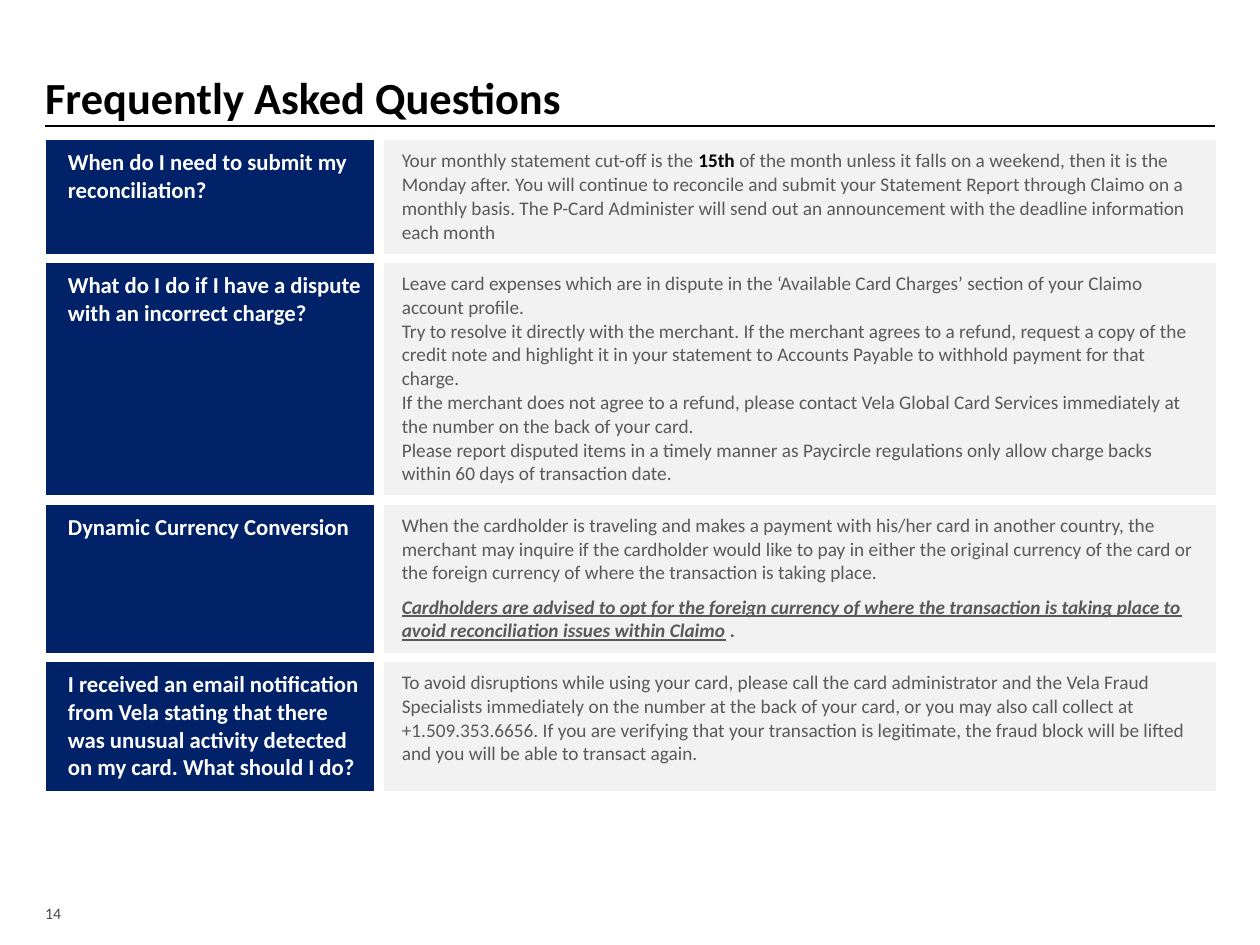
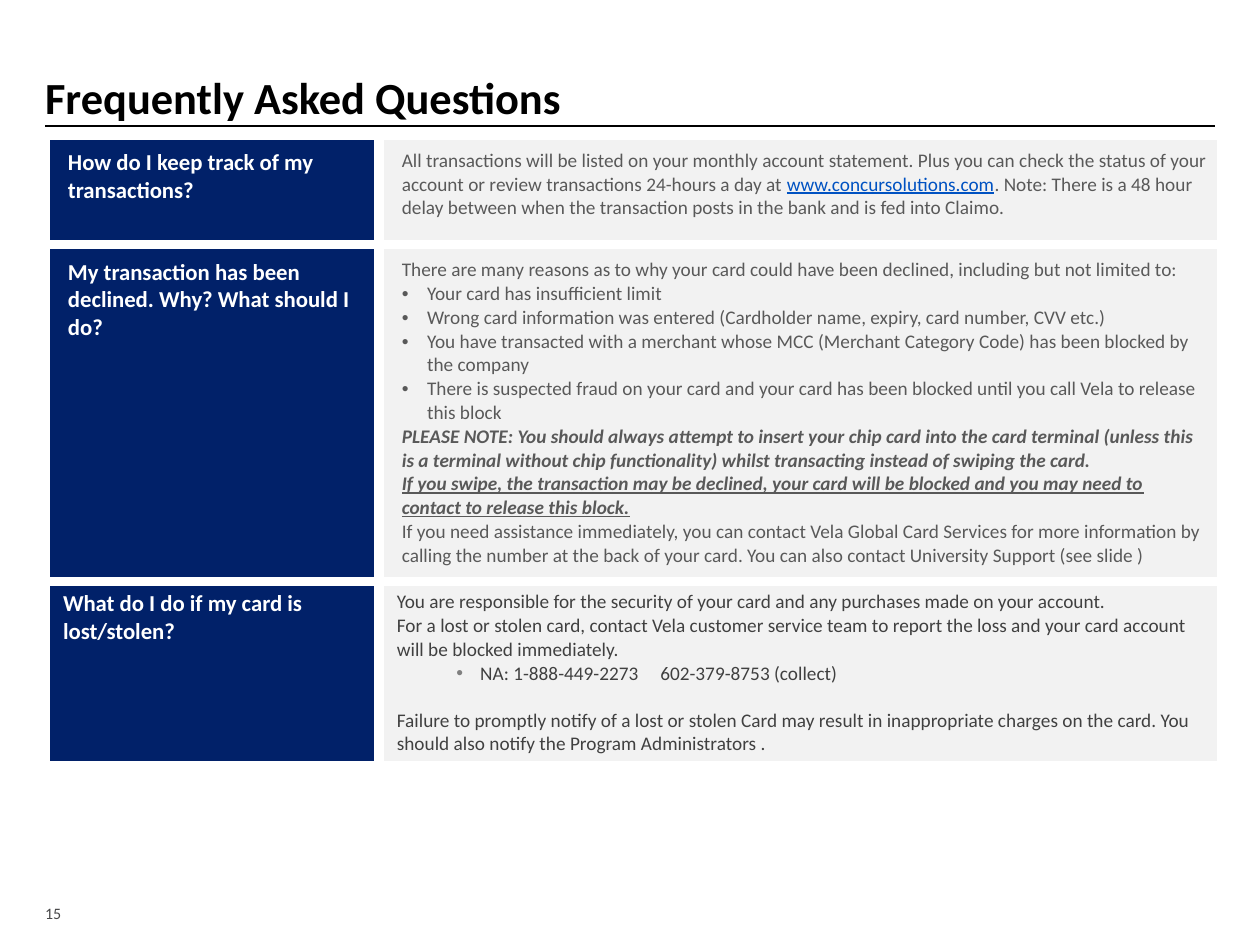
from dataclasses import dataclass

from lxml import etree
from pptx import Presentation
from pptx import util as u
from pptx.dml.color import RGBColor
from pptx.enum import shapes, text
from pptx.oxml.ns import qn


@dataclass(frozen=True)
class Theme:
    font: str = "Calibri"
    # colours
    navy: str = "012169"
    pale: str = "F2F2F2"
    white: str = "FFFFFF"
    black: str = "000000"
    grey: str = "595959"
    dark: str = "404040"
    bullet: str = "808080"
    link: str = "0052C2"
    footer: str = "484849"
    # type sizes
    title_size: float = 25.4
    question_size: float = 13
    answer_size: float = 11
    footer_size: float = 9.1


@dataclass
class Para:
    """Runs are strings or (string, format) pairs."""
    runs: tuple
    before: float = 0
    after: float = 0
    level: int = 0
    bullet: str = ""
    indent: float = 0
    hang: float = 0
    tab: float = 0


T = Theme()
LEFT = u.Cm(0.91)
ROOMY = (0.46, 0.28, 0.28, 0.28)   # left, top, right, bottom in cm
TIGHT = (0.36, 0.18, 0.28, 0.18)
STRONG = dict(bold=True, italic=True)
STRESSED = dict(STRONG, underline=True)


def add_text(p, content, size=T.answer_size, color=T.grey, bold=False,
             italic=False, underline=False):
    r = p.add_run()
    r.text = content
    f = r.font
    f.name, f.size, f.color.rgb = T.font, u.Pt(size), RGBColor.from_string(color)
    f.bold, f.italic, f.underline = bold, italic, underline
    return r


def add_color(parent, color):
    etree.SubElement(parent, qn("a:srgbClr"), val=color)


def para(*runs, **layout):
    return Para(runs, **layout)


def item(content):
    return para(content, bullet=T.grey, indent=0.51, hang=0.51)


class Deck:
    def __init__(self, theme):
        self.t = theme
        self.prs = Presentation()
        self.prs.slide_width, self.prs.slide_height = u.Cm(25.4), u.Cm(19.05)
        self.s = None

    def slide(self, title, number):
        self.s = self.prs.slides.add_slide(self.prs.slide_layouts[5])
        self.title(title)
        self.rule()
        self.page_number(number)

    def plain_frame(self, sp, anchor):
        tf = sp.text_frame
        tf.word_wrap, tf.auto_size = True, text.MSO_AUTO_SIZE.NONE
        tf.vertical_anchor = anchor
        tf.margin_left = tf.margin_top = tf.margin_right = tf.margin_bottom = 0
        p = tf.paragraphs[0]
        p.alignment = text.PP_ALIGN.LEFT
        return p

    def title(self, content):
        sp = self.s.shapes.title
        sp.left, sp.top, sp.width, sp.height = LEFT, u.Cm(1.59), u.Cm(19.05), u.Cm(0.91)
        p = self.plain_frame(sp, text.MSO_ANCHOR.TOP)
        p.line_spacing = u.Pt(self.t.title_size)
        add_text(p, content, size=self.t.title_size, color=self.t.black, bold=True)

    def rule(self):
        y = u.Cm(2.54)
        line = self.s.shapes.add_connector(
            shapes.MSO_CONNECTOR.STRAIGHT, LEFT, y, u.Cm(24.49), y)
        line.line.color.rgb = RGBColor.from_string(self.t.black)
        line.line.width = u.Pt(1.5)
        etree.SubElement(line.element.spPr, qn("a:effectLst"))

    def page_number(self, number):
        sp = self.s.shapes.add_textbox(LEFT, u.Cm(18.14), u.Cm(1.02), u.Cm(0.46))
        p = self.plain_frame(sp, text.MSO_ANCHOR.BOTTOM)
        add_text(p, str(number), size=self.t.footer_size, color=self.t.footer)

    def paragraph(self, p, spec, **fmt):
        pPr = p._p.get_or_add_pPr()
        if spec.bullet:
            pPr.set("marL", str(u.Cm(spec.indent)))
            pPr.set("indent", str(-u.Cm(spec.hang)))
            add_color(etree.SubElement(pPr, qn("a:buClr")), spec.bullet)
            etree.SubElement(pPr, qn("a:buFont"), typeface="Arial")
            etree.SubElement(pPr, qn("a:buChar"), char="•")
        if spec.tab:
            tabs = etree.SubElement(pPr, qn("a:tabLst"))
            etree.SubElement(tabs, qn("a:tab"), pos=str(u.Cm(spec.tab)), algn="l")
        p.level = spec.level
        if spec.before:
            p.space_before = u.Pt(spec.before)
        if spec.after:
            p.space_after = u.Pt(spec.after)
        for run in spec.runs:
            content, own = (run, {}) if isinstance(run, str) else run
            add_text(p, content, **{**fmt, **own})

    def cell(self, cell, paras, fill, edges, margins, **fmt):
        (cell.margin_left, cell.margin_top,
         cell.margin_right, cell.margin_bottom) = map(u.Cm, margins)
        tcPr = cell._tc.get_or_add_tcPr()
        for edge in edges:
            ln = etree.SubElement(tcPr, qn("a:ln" + edge), w=str(u.Pt(6)))
            add_color(etree.SubElement(ln, qn("a:solidFill")), self.t.white)
        cell.fill.solid()
        cell.fill.fore_color.rgb = RGBColor.from_string(fill)
        tf = cell.text_frame
        for i, spec in enumerate(paras):
            p = tf.add_paragraph() if i else tf.paragraphs[0]
            self.paragraph(p, spec, **fmt)

    def faq(self, top, widths, rows, framed=False):
        """Each row: height in cm, question, answer paragraphs, cell options."""
        heights = [row[0] for row in rows]
        frame = self.s.shapes.add_table(
            len(rows), 2, LEFT, u.Cm(top), u.Cm(sum(widths)), u.Cm(sum(heights)))
        table = frame.table
        table.first_row = table.horz_banding = False
        for column, width in zip(table.columns, widths):
            column.width = u.Cm(width)
        left_edges, right_edges = ("LRTB", "LRTB") if framed else ("RTB", "LTB")
        for i, (height, question, answer, options) in enumerate(rows):
            table.rows[i].height = u.Cm(height)
            margins = options.get("margins", ROOMY)
            self.cell(table.cell(i, 0), [para(question)], self.t.navy, left_edges,
                      margins, size=self.t.question_size, color=self.t.white, bold=True)
            self.cell(table.cell(i, 1), answer, self.t.pale, right_edges,
                      margins, color=options.get("color", self.t.grey))


GENERAL_ROWS = [
    (2.46, "When do I need to submit my reconciliation?", [
        para("Your monthly statement cut-off is the ",
             ("15th ", dict(color=T.black, bold=True)),
             "of the month unless it falls on a weekend, then it is the Monday after. "
             "You will continue to reconcile and submit your Statement Report through "
             "Claimo on a monthly basis. The P-Card Administer will send out an "
             "announcement with the deadline information each month"),
    ], {}),
    (4.84, "What do I do if I have a dispute with an incorrect charge?", [
        para("Leave card expenses which are in dispute in the ‘Available Card Charges’ "
             "section of your Claimo account profile."),
        para("Try to resolve it directly with the merchant. If the merchant agrees to a "
             "refund, request a copy of the credit note and highlight it in your "
             "statement to Accounts Payable to withhold payment for that charge."),
        para("If the merchant does not agree to a refund, please contact Vela Global Card "
             "Services immediately at the number on the back of your card."),
        para("Please report disputed items in a timely manner as Paycircle regulations "
             "only allow charge backs within 60 days of transaction date."),
    ], {}),
    (3.17, "Dynamic Currency Conversion", [
        para("When the cardholder is traveling and makes a payment with his/her card in "
             "another country, the merchant may inquire if the cardholder would like to "
             "pay in either the original currency of the card or the foreign currency "
             "of where the transaction is taking place.", after=6),
        para(("Cardholders are advised to opt for the foreign currency of where the "
              "transaction is taking place to avoid reconciliation issues within Claimo",
              STRESSED), " ", (".", STRONG)),
    ], {}),
    (2.77, "I received an email notification from Vela stating that there was unusual "
           "activity detected on my card. What should I do?", [
        para("To avoid disruptions while using your card, please call the card "
             "administrator and the Vela Fraud Specialists immediately on the number at "
             "the back of your card, or you may also call collect at +1.509.353.6656. "
             "If you are verifying that your transaction is legitimate, the fraud block "
             "will be lifted and you will be able to transact again."),
    ], {}),
]

CARD_ROWS = [
    (2.21, "How do I keep track of my transactions?", [
        para("All transactions will be listed on your monthly account statement. Plus you "
             "can check the status of your account or review transactions 24-hours a "
             "day at ",
             ("www.concursolutions.com", dict(color=T.link, underline=True)),
             ". Note: There is a 48 hour delay between when the transaction posts in "
             "the bank and is fed into Claimo."),
    ], {}),
    (6.78, "My transaction has been declined. Why? What should I do?", [
        para("There are many reasons as to why your card could have been declined, "
             "including but not limited to:"),
        item("Your card has insufficient limit"),
        item("Wrong card information was entered (Cardholder name, expiry, card number, "
             "CVV etc.)"),
        item("You have transacted with a merchant whose MCC (Merchant Category Code) has "
             "been blocked by the company"),
        item("There is suspected fraud on your card and your card has been blocked until "
             "you call Vela to release this block"),
        para(("PLEASE NOTE: You should always attempt to insert your chip card into the "
              "card terminal (unless this is a terminal without chip functionality) "
              "whilst transacting instead of swiping the card.", STRONG)),
        para(("If you swipe, the transaction may be declined, your card will be blocked "
              "and you may need to contact to release this block.", STRESSED)),
        para("If you need assistance immediately, you can contact Vela Global Card "
             "Services for more information by calling the number at the back of your "
             "card. You can also contact University Support (see slide )"),
    ], {}),
    (3.71, "What do I do if my card is lost/stolen?", [
        para("You are responsible for the security of your card and any purchases made on "
             "your account."),
        para("For a lost or stolen card, contact Vela customer service team to report the "
             "loss and your card account will be blocked immediately."),
        para("NA: 1-888-449-2273\t602-379-8753 (collect)", level=1, bullet=T.bullet,
             indent=1.68, hang=0.48, tab=5.31),
        para("Failure to promptly notify of a lost or stolen Card may result in "
             "inappropriate charges on the card. You should also notify the Program "
             "Administrators .", before=13.4),
    ], dict(margins=TIGHT, color=T.dark)),
]


def main():
    deck = Deck(T)
    heading = "Frequently Asked Questions"

    # Statements, disputes, currency and fraud alerts
    deck.slide(heading, 14)
    deck.faq(2.73, (6.73, 16.89), GENERAL_ROWS)

    # Tracking, declined and lost cards
    deck.slide(heading, 15)
    deck.faq(2.72, (6.73, 16.99), CARD_ROWS, framed=True)

    deck.prs.save("out.pptx")


if __name__ == "__main__":
    main()
